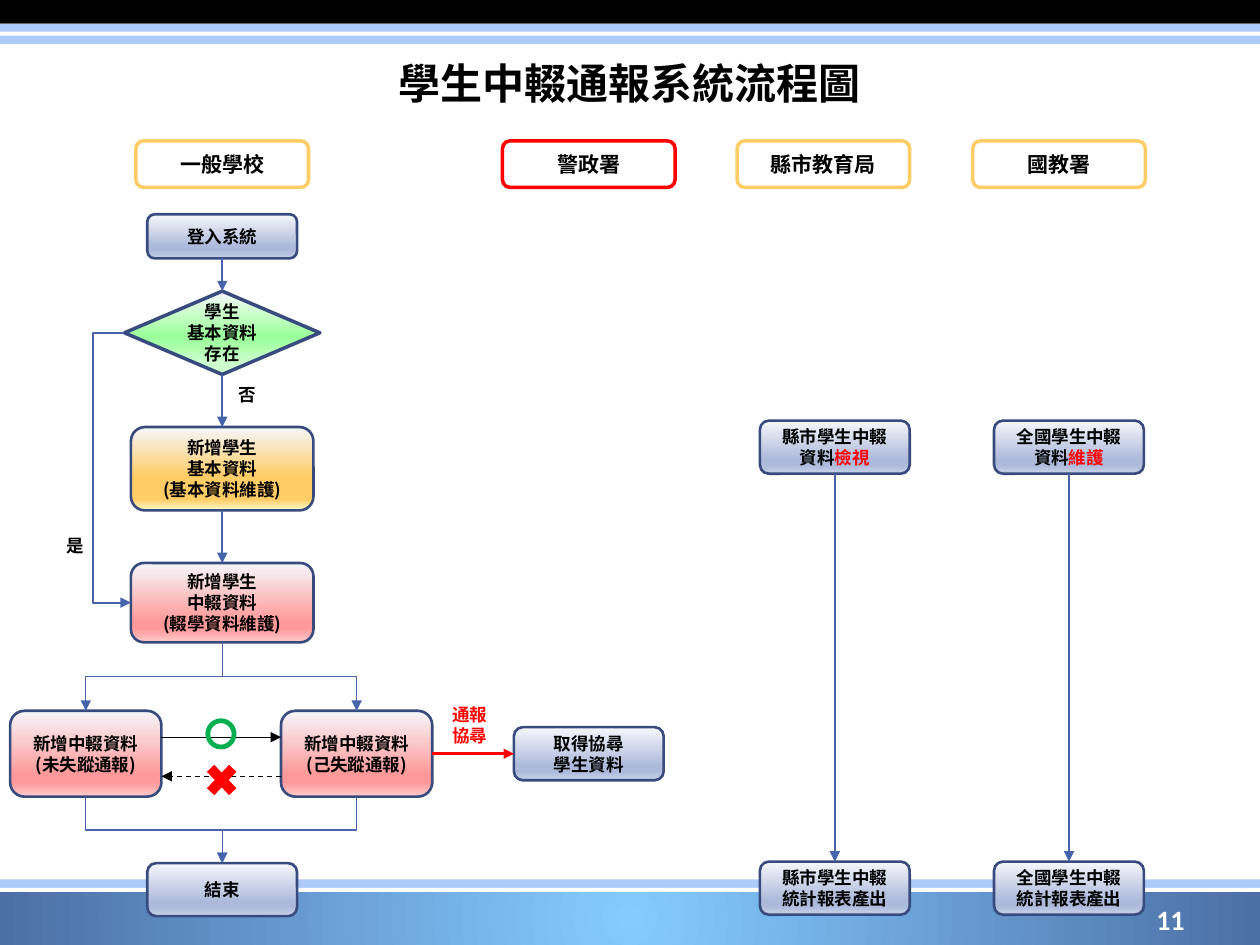
from lxml import etree
from pptx import Presentation
from pptx.dml.color import RGBColor
from pptx.enum.dml import MSO_LINE
from pptx.enum.shapes import MSO_CONNECTOR as Link, MSO_SHAPE as Form
from pptx.enum.text import MSO_ANCHOR as Anchor, PP_ALIGN as Align
from pptx.oxml.ns import qn
from pptx.util import Cm, Pt

BLACK = RGBColor(0x00, 0x00, 0x00)
WHITE = RGBColor(0xFF, 0xFF, 0xFF)
RED = RGBColor(0xFF, 0x00, 0x00)
GREEN = RGBColor(0x00, 0xB0, 0x50)
SKY = RGBColor(0xAC, 0xCB, 0xF9)
GLOW = RGBColor(0x85, 0xCB, 0xFF)
STEEL = RGBColor(0x4C, 0x70, 0xA6)
AMBER = RGBColor(0xFF, 0xCC, 0x66)
CREAM = RGBColor(0xFF, 0xFF, 0xCC)
NAVY = RGBColor(0x37, 0x4B, 0x7F)
BLUE = RGBColor(0x46, 0x63, 0xAB)
MIST = RGBColor(0xF6, 0xF7, 0xFB)
LAVENDER = RGBColor(0xAC, 0xB9, 0xDB)
PALE_LAVENDER = RGBColor(0xC8, 0xD1, 0xE7)
ROSE = RGBColor(0xFF, 0x99, 0x99)
PALE_ROSE = RGBColor(0xFF, 0xCC, 0xCC)
LIME = RGBColor(0x99, 0xFF, 0x99)
PALE_LIME = RGBColor(0xCC, 0xFF, 0xCC)

# Gradient stops: (percent, colour)
BLUE_FILL = [(0, MIST), (74, LAVENDER), (83, LAVENDER), (100, PALE_LAVENDER)]
ROSE_FILL = [(0, MIST), (74, ROSE), (83, ROSE), (100, PALE_ROSE)]
AMBER_FILL = [(0, MIST), (59, AMBER), (87, AMBER), (100, CREAM)]
LIME_FILL = [(0, MIST), (26, PALE_LIME), (55, LIME), (85, PALE_LIME)]
FOOTER_FILL = [(0, GLOW), (100, STEEL)]

TOP, LEFT, BOTTOM, RIGHT = range(4)
CJK = "Noto Sans CJK SC"


class FlowPage:
    def __init__(self, deck):
        self.page = deck.slides.add_slide(deck.slide_layouts[6])
        self.shapes = self.page.shapes

    def style_span(self, span, size, color, font=CJK):
        span.font.name, span.font.size, span.font.bold = font, Pt(size), True
        span.font.color.rgb = color
        east = etree.SubElement(span.font._element, qn("a:ea"))
        east.set("typeface", CJK)

    def set_text(self, box, text, size, color=BLACK, font=CJK, align=Align.CENTER):
        box.text_frame.word_wrap = True
        box.text_frame.text = text
        for para in box.text_frame.paragraphs:
            para.alignment = align
            for span in para.runs:
                self.style_span(span, size, color, font)

    def label(self, x, y, w, h, text, size=10, color=BLACK, font="Arial",
              align=Align.CENTER, anchor=Anchor.TOP):
        box = self.shapes.add_textbox(Cm(x), Cm(y), Cm(w), Cm(h))
        self.set_text(box, text, size, color, font, align)
        box.text_frame.vertical_anchor = anchor

    def shape(self, form, x, y, w, h, fill=None, line=None, weight=1.5):
        box = self.shapes.add_shape(form, Cm(x), Cm(y), Cm(w), Cm(h))
        box.shadow.inherit = False
        if fill is None:
            box.fill.background()
        elif isinstance(fill, RGBColor):
            box.fill.solid()
            box.fill.fore_color.rgb = fill
        else:
            self.gradient(box, fill)
        if line is None:
            box.line.fill.background()
        else:
            box.line.color.rgb, box.line.width = line, Pt(weight)
        return box

    def gradient(self, box, stops):
        box.fill.gradient()
        grad = box._element.spPr.find(qn("a:gradFill"))
        for child in list(grad):
            grad.remove(child)
        stop_list = etree.SubElement(grad, qn("a:gsLst"))
        for percent, color in stops:
            stop = etree.SubElement(stop_list, qn("a:gs"), pos=str(percent * 1000))
            etree.SubElement(stop, qn("a:srgbClr"), val=str(color))
        if stops is FOOTER_FILL:
            radial = etree.SubElement(grad, qn("a:path"), path="circle")
            etree.SubElement(radial, qn("a:fillToRect"), l="50000", t="50000",
                             r="50000", b="50000")
        else:
            etree.SubElement(grad, qn("a:lin"), ang="5400000", scaled="0")

    def header(self, center, text, line=AMBER):
        box = self.shape(Form.ROUNDED_RECTANGLE, center - 1.74, 2.84, 3.48, 0.94,
                         line=line, weight=2)
        self.set_text(box, text, 12)

    def step(self, center, y, w, h, text, fill=BLUE_FILL, red="",
             form=Form.ROUNDED_RECTANGLE, weight=1.5):
        box = self.shape(form, center - w / 2, y, w, h, fill, NAVY, weight)
        self.set_text(box, text, 10)
        if red:
            span = box.text_frame.paragraphs[0].add_run()
            span.text = red
            self.style_span(span, 10, RED)
        return box

    def arrow(self, kind, x1, y1, x2, y2, color, weight):
        link = self.shapes.add_connector(kind, x1, y1, x2, y2)
        link.line.color.rgb, link.line.width = color, Pt(weight)
        etree.SubElement(link.line._get_or_add_ln(), qn("a:tailEnd"), type="triangle")
        etree.SubElement(link._element.spPr, qn("a:effectLst"))
        return link

    def join(self, start, start_side, end, end_side, color=BLUE, weight=1):
        link = self.arrow(Link.STRAIGHT, 0, 0, 0, 0, color, weight)
        link.begin_connect(start, start_side)
        link.end_connect(end, end_side)

    def drop(self, start, end):
        """Elbow from the bottom of one box down to the top of another."""
        x1, y1 = start.left + start.width // 2, start.top + start.height
        x2, y2 = end.left + end.width // 2, end.top
        run, fall = abs(x2 - x1), y2 - y1
        left, top = (x1 + x2 - fall) // 2, (y1 + y2 - run) // 2
        link = self.arrow(Link.ELBOW, left, top, left + fall, top + run, BLUE, 0.75)
        frame = link._element.spPr.find(qn("a:xfrm"))
        frame.set("rot", str((90 if x2 < x1 else 270) * 60000))
        if x2 > x1:
            frame.set("flipH", "1")

    def bypass(self, start, end, lane):
        """Elbow that leaves and enters on the left, by way of x = lane."""
        x1, x2 = start.left, end.left
        link = self.arrow(Link.ELBOW, x1, start.top + start.height // 2,
                          x2, end.top + end.height // 2, BLUE, 1.25)
        guides = link._element.spPr.find(qn("a:prstGeom")).get_or_add_avLst()
        bend = round((Cm(lane) - x1) / (x2 - x1) * 100000)
        etree.SubElement(guides, qn("a:gd"), name="adj1", fmla=f"val {bend}")


def main():
    deck = Presentation()
    deck.slide_width, deck.slide_height = Cm(25.4), Cm(19.05)
    flow = FlowPage(deck)

    # Bands at the top and bottom
    for y, h, fill in [(0, 0.48, BLACK), (0.48, 0.41, SKY), (0.64, 0.08, WHITE),
                       (17.96, 1.09, FOOTER_FILL), (17.73, 0.25, SKY),
                       (17.9, 0.08, WHITE)]:
        flow.shape(Form.RECTANGLE, 0, y, 25.4, h, fill)

    # Title and page number
    flow.label(1.27, 0.76, 22.86, 1.8, "學生中輟通報系統流程圖", 24, font=CJK,
               anchor=Anchor.MIDDLE)
    flow.label(21.69, 18.03, 2.44, 1.02, "11", 16, WHITE, "Calibri", Align.RIGHT,
               Anchor.MIDDLE)

    # Column headers
    school, police = 4.48, 11.87
    flow.header(school, "一般學校")
    flow.header(police, "警政署", RED)
    flow.header(16.6, "縣市教育局")
    flow.header(21.35, "國教署")

    # School steps
    login = flow.step(school, 4.32, 3.02, 0.89, "登入系統")
    exists = flow.step(school, 5.87, 3.94, 1.68, "學生\n基本資料存在", LIME_FILL,
                       form=Form.FLOWCHART_DECISION, weight=2)
    basic = flow.step(school, 8.61, 3.68, 1.68, "新增學生\n基本資料\n(基本資料維護)",
                      AMBER_FILL)
    dropout = flow.step(school, 11.35, 3.68, 1.6, "新增學生\n中輟資料\n(輟學資料維護)",
                        ROSE_FILL)
    present, missing = [
        flow.step(center, 14.33, 3.05, 1.73, f"新增中輟資料\n({state}失蹤通報)", ROSE_FILL)
        for center, state in [(1.73, "未"), (7.19, "己")]]
    finish = flow.step(school, 17.4, 3.02, 1.07, "結束")

    for start, end in [(login, exists), (exists, basic), (basic, dropout)]:
        flow.join(start, BOTTOM, end, TOP)
    flow.bypass(exists, dropout, 1.88)
    for branch in (present, missing):
        flow.drop(dropout, branch)
        flow.drop(branch, finish)
    flow.label(1.09, 10.67, 0.61, 0.69, "是")
    flow.label(4.55, 7.62, 0.61, 0.69, "否")

    # Allowed and forbidden changes between the two reports
    inner_left, inner_right = present.left + present.width, missing.left
    flow.arrow(Link.STRAIGHT, inner_left, Cm(14.86), inner_right, Cm(14.86), BLACK, 0.75)
    back = flow.arrow(Link.STRAIGHT, inner_right, Cm(15.65), inner_left, Cm(15.65),
                      BLACK, 0.75)
    back.line.dash_style = MSO_LINE.DASH
    flow.shape(Form.OVAL, 4.19, 14.53, 0.53, 0.53, line=GREEN, weight=2.75)
    flow.shape(Form.MATH_MULTIPLY, 4.04, 15.27, 0.86, 0.91, RED)

    # Police search
    search = flow.step(police, 14.66, 3.02, 1.07, "取得協尋\n學生資料")
    flow.join(missing, RIGHT, search, LEFT, RED, 1.5)
    flow.label(8.79, 14.07, 1.35, 1.12, "通報\n協尋", color=RED)

    # County and national offices
    for center, area, task in [(16.83, "縣市", "檢視"), (21.55, "全國", "維護")]:
        data = flow.step(center, 8.48, 3.02, 1.07, f"{area}學生中輟資料", red=task)
        report = flow.step(center, 17.37, 3.02, 1.07, f"{area}學生中輟統計報表產出")
        flow.join(data, BOTTOM, report, TOP)

    deck.save("out.pptx")


if __name__ == "__main__":
    main()
